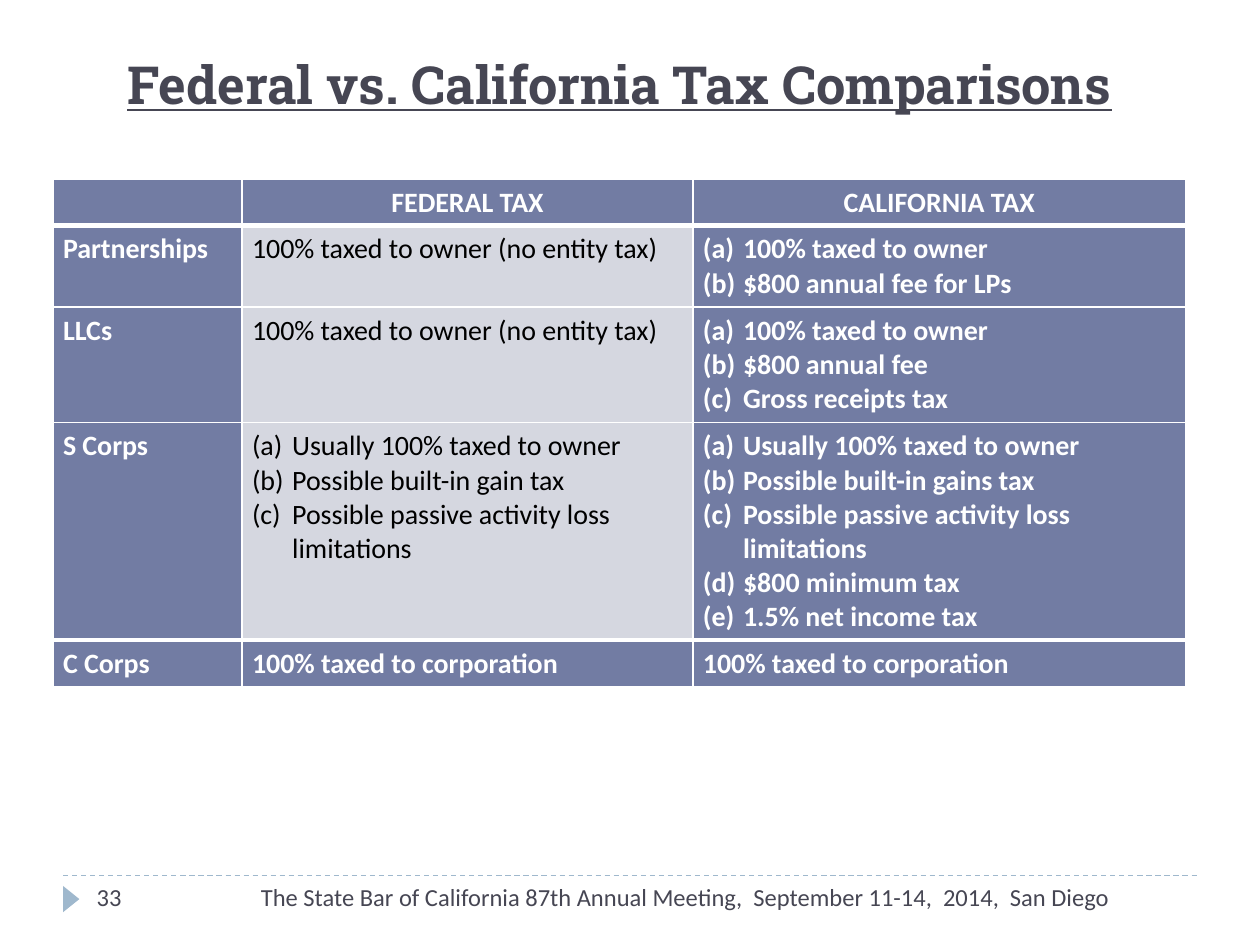
from dataclasses import dataclass
from typing import Any

from lxml.etree import SubElement
from pptx import Presentation
from pptx.dml.color import RGBColor
from pptx.enum.dml import MSO_LINE
from pptx.enum.shapes import MSO_CONNECTOR, MSO_SHAPE
from pptx.enum.text import MSO_ANCHOR, PP_ALIGN
from pptx.oxml.ns import qn
from pptx.util import Cm, Pt

HUES = {"ink": "464653", "blue": "727CA3", "pale": "D5D7E0",
        "sky": "9FB8CD", "white": "FFFFFF", "black": "000000"}
BODY = {"name": "Calibri", "size": Pt(16), "bold": True}
FOOT = {"name": "Calibri", "size": Pt(14)}
HEAD = {"name": "Roboto Slab", "size": Pt(30), "bold": True, "underline": True}
PADS = {"margin_left": Cm(0.2), "margin_right": Cm(0.2),
        "margin_top": Cm(0.13), "margin_bottom": Cm(0.13)}
COLS = (3.81, 9.09, 9.93)
HIGHS = (0.94, 1.64, 2.33, 4.38, 0.94)
OWNER = "100% taxed to owner"
CORP = "100% taxed to corporation"
USUAL = f"(a)\tUsually {OWNER}"
LOSS = ("(c)\tPossible passive activity loss", "\tlimitations")
ROWS = (
    ((), ("FEDERAL TAX",), ("CALIFORNIA TAX",)),
    (("Partnerships",), (f"{OWNER} (no entity tax)",),
     (f"(a)\t{OWNER}", "(b)\t$800 annual fee for LPs")),
    (("LLCs",), (f"{OWNER} (no entity tax)",),
     (f"(a)\t{OWNER}", "(b)\t$800 annual fee", "(c)\tGross receipts tax")),
    (("S Corps",), (USUAL, "(b)\tPossible built-in gain tax", *LOSS),
     (USUAL, "(b)\tPossible built-in gains tax", *LOSS,
      "(d)\t$800 minimum tax", "(e)\t1.5% net income tax")),
    (("C Corps",), (CORP,), (CORP,)),
)


@dataclass
class Label:
    """A line of text in a box, with its place in centimetres."""
    text: str
    box: tuple[float, float, float, float]
    font: dict[str, Any]
    align: PP_ALIGN
    hold: MSO_ANCHOR = MSO_ANCHOR.TOP


LABELS = (
    Label("The State Bar of California 87th Annual Meeting,  September 11-14,  2014,  San Diego",
          (4.01, 17.65, 18.62, 1.02), FOOT, PP_ALIGN.RIGHT),
    Label("33", (1.7, 17.65, 5.51, 1.02), FOOT, PP_ALIGN.LEFT),
    Label("Federal vs. California Tax Comparisons", (1.3, 0.84, 22.38, 1.7),
          HEAD, PP_ALIGN.CENTER, MSO_ANCHOR.MIDDLE),
)


def apply(item: Any, values: dict[str, Any]) -> None:
    """Set each named value on the item."""
    for key, value in values.items():
        setattr(item, key, value)


def tone(name: str) -> RGBColor:
    """Return the named colour."""
    return RGBColor.from_string(HUES[name])


def paint(fill: Any, name: str) -> None:
    """Fill with one named colour."""
    fill.solid()
    fill.fore_color.rgb = tone(name)


def write(para: Any, text: str, font: dict[str, Any], hue: str, align: PP_ALIGN) -> None:
    """Write one styled line, with a tab stop where it has a tab."""
    para.alignment = align
    run = para.add_run()
    run.text = text
    apply(run.font, font)
    run.font.color.rgb = tone(hue)
    if "\t" in text:
        tabs = SubElement(para._p.get_or_add_pPr(), qn("a:tabLst"))
        SubElement(tabs, qn("a:tab"), pos=str(Cm(0.81)), algn="l")


def edge(cell: Any, side: str, width: float) -> None:
    """Draw one white cell border."""
    line = SubElement(cell._tc.get_or_add_tcPr(), qn(f"a:{side}"), w=str(Pt(width)))
    fill = SubElement(line, qn("a:solidFill"))
    SubElement(fill, qn("a:srgbClr"), val=HUES["white"])


def draw_cell(cell: Any, lines: tuple[str, ...], row: int, col: int) -> None:
    """Draw one cell by its place in the grid."""
    last = len(ROWS) - 1
    inner = col == 1 and 0 < row < last
    apply(cell, PADS)
    for side in ("lnL", "lnR", "lnT", "lnB"):
        thick = (side == "lnT" and row in (1, last)) or (side == "lnB" and row in (0, last - 1))
        edge(cell, side, 3 if thick else 1)
    paint(cell.fill, "pale" if inner else "blue")
    frame = cell.text_frame
    for spot, text in enumerate(lines):
        para = frame.add_paragraph() if spot else frame.paragraphs[0]
        listed = "\t" in text or (row == last and col == 2)
        align = PP_ALIGN.CENTER if row == 0 else PP_ALIGN.JUSTIFY if listed else PP_ALIGN.LEFT
        write(para, text, BODY | {"bold": not inner}, "black" if inner else "white", align)
    if not lines:
        SubElement(frame.paragraphs[0]._p, qn("a:endParaRPr"), sz="1600")


def draw_table(slide: Any) -> None:
    """Draw the tax table."""
    table = slide.shapes.add_table(len(ROWS), len(COLS), Cm(1.07), Cm(3.61),
                                   Cm(sum(COLS)), Cm(sum(HIGHS))).table
    for col, width in zip(table.columns, COLS):
        col.width = Cm(width)
    for row, high in zip(table.rows, HIGHS):
        row.height = Cm(high)
    for row, cells in enumerate(ROWS):
        for col, lines in enumerate(cells):
            draw_cell(table.cell(row, col), lines, row, col)


def draw_label(slide: Any, label: Label) -> None:
    """Draw one text box."""
    frame = slide.shapes.add_textbox(*map(Cm, label.box)).text_frame
    apply(frame, {"word_wrap": True, "vertical_anchor": label.hold})
    write(frame.paragraphs[0], label.text, label.font, "ink", label.align)


def draw_foot(slide: Any) -> None:
    """Draw the dashed rule and the page mark."""
    rule = slide.shapes.add_connector(MSO_CONNECTOR.STRAIGHT, Cm(1.27), Cm(17.65),
                                      Cm(24.13), Cm(17.65))
    apply(rule.line, {"width": Pt(0.75), "dash_style": MSO_LINE.DASH})
    rule.line.color.rgb = tone("sky")
    SubElement(rule._element.spPr, qn("a:effectLst"))
    mark = slide.shapes.add_shape(MSO_SHAPE.ISOSCELES_TRIANGLE, Cm(1.17), Cm(17.96),
                                  Cm(0.53), Cm(0.33))
    mark.rotation = 90
    mark.shadow.inherit = False
    mark.line.fill.background()
    paint(mark.fill, "sky")


def main() -> None:
    """Build and save the slide."""
    deck = Presentation()
    apply(deck, {"slide_width": Cm(25.4), "slide_height": Cm(19.05)})
    slide = deck.slides.add_slide(deck.slide_layouts[6])
    paint(slide.background.fill, "white")
    draw_foot(slide)
    for label in LABELS:
        draw_label(slide, label)
    draw_table(slide)
    deck.save("out.pptx")


if __name__ == "__main__":
    main()
